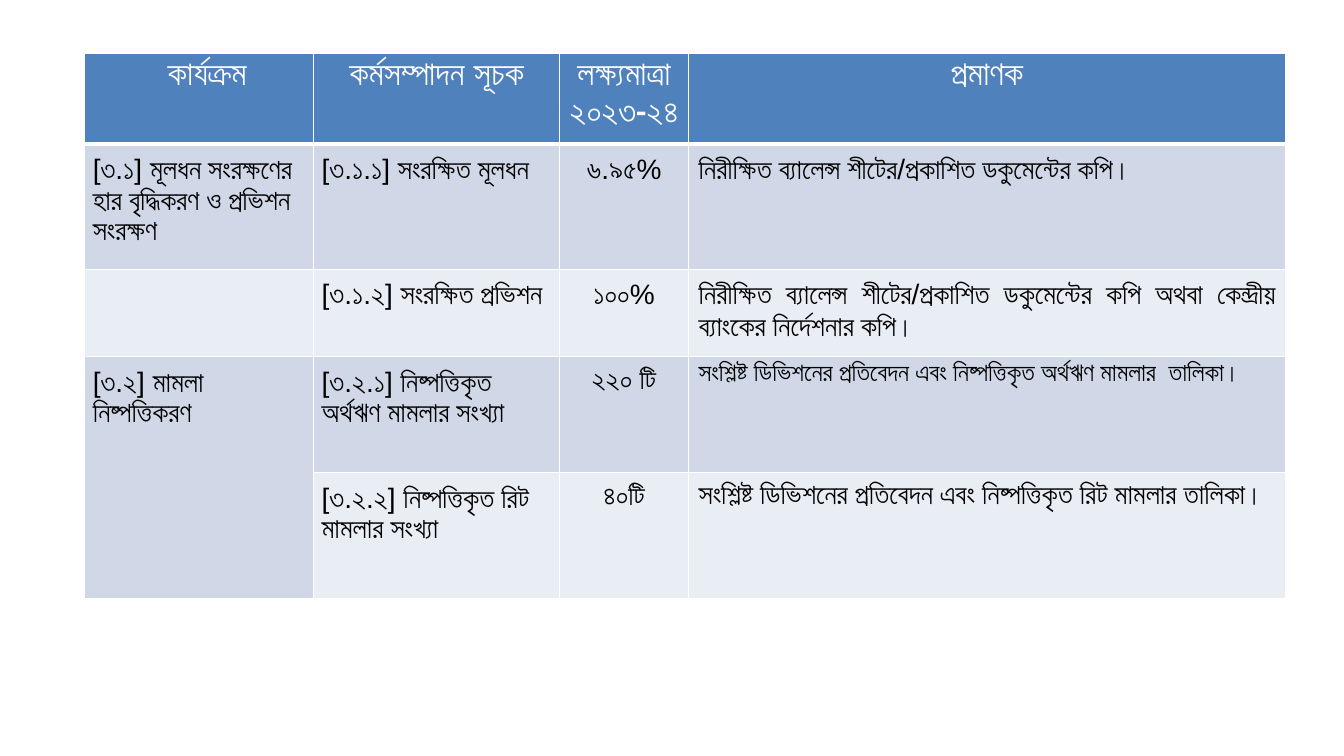
import pptx
import pptx.util
import pptx.dml.color
import pptx.enum.text
from lxml import etree
from pptx.oxml.ns import qn

Inches, Pt = pptx.util.Inches, pptx.util.Pt
ALIGN = pptx.enum.text.PP_ALIGN

HEADINGS = ["কার্যক্রম", "কর্মসম্পাদন সূচক", "লক্ষ্যমাত্রা ২০২৩-২৪", "প্রমাণক"]
TARGETS = [
    ("[৩.১] মূলধন সংরক্ষণের হার বৃদ্ধিকরণ ও প্রভিশন সংরক্ষণ",
     "[৩.১.১] সংরক্ষিত মূলধন", "৬.৯৫%",
     "নিরীক্ষিত ব্যালেন্স শীটের/প্রকাশিত ডকুমেন্টের কপি।"),
    ("", "[৩.১.২] সংরক্ষিত প্রভিশন", "১০০%",
     "নিরীক্ষিত ব্যালেন্স শীটের/প্রকাশিত ডকুমেন্টের কপি অথবা কেন্দ্রীয় ব্যাংকের নির্দেশনার কপি।"),
    ("[৩.২] মামলা নিষ্পত্তিকরণ",
     "[৩.২.১] নিষ্পত্তিকৃত অর্থঋণ মামলার সংখ্যা", "২২০ টি",
     "সংশ্লিষ্ট ডিভিশনের প্রতিবেদন এবং নিষ্পত্তিকৃত অর্থঋণ মামলার  তালিকা।"),
    ("", "[৩.২.২] নিষ্পত্তিকৃত রিট মামলার সংখ্যা", "৪০টি",
     "সংশ্লিষ্ট ডিভিশনের প্রতিবেদন এবং নিষ্পত্তিকৃত রিট মামলার তালিকা।"),
]
COLUMN_WIDTHS = [2.27, 2.44, 1.28, 5.92]
ROW_HEIGHTS = [0.9, 1.24, 0.87, 1.15, 1.25]
LEFT, TOP = 0.84, 0.53
HEADER_FILL, BAND_FILLS = "4F81BD", ["D0D8E8", "E9EDF4"]
WHITE, BLACK = "FFFFFF", "000000"
PROOF_COLUMN = 3
SHORT_PROOF = (3, PROOF_COLUMN)  # the one proof set smaller, on a single line


def color(hex_value):
    return pptx.dml.color.RGBColor.from_string(hex_value)


def add_borders(cell, bottom_width):
    properties = cell._tc.get_or_add_tcPr()
    for side, width in (("L", 1), ("R", 1), ("T", 1), ("B", bottom_width)):
        line = etree.SubElement(properties, qn(f"a:ln{side}"), w=str(Pt(width)))
        solid = etree.SubElement(line, qn("a:solidFill"))
        etree.SubElement(solid, qn("a:srgbClr"), val=WHITE)


def style_cell(cell, fill, bottom_width, side_margin, end_margin):
    add_borders(cell, bottom_width)
    cell.fill.solid()
    cell.fill.fore_color.rgb = color(fill)
    cell.margin_left = cell.margin_right = Inches(side_margin)
    cell.margin_top = cell.margin_bottom = Inches(end_margin)


def write(cell, text, font_name, size, ink, bold, alignment):
    cell.text = text
    paragraph = cell.text_frame.paragraphs[0]
    paragraph.alignment = alignment
    font = paragraph.font
    font.name, font.size, font.bold = font_name, Pt(size), bold
    font.color.rgb = color(ink)
    return paragraph


def fill_header(table):
    for column, heading in enumerate(HEADINGS):
        cell = table.cell(0, column)
        style_cell(cell, HEADER_FILL, 3, 0.1, 0.05)
        write(cell, heading, "Calibri", 24, WHITE, True, ALIGN.CENTER)
    table.cell(0, 0).margin_left = Inches(0.26)


def fill_targets(table):
    column_alignments = [ALIGN.LEFT, ALIGN.LEFT, ALIGN.CENTER, ALIGN.JUSTIFY]
    for row, target in enumerate(TARGETS, start=1):
        for column, text in enumerate(target):
            cell = table.cell(row, column)
            is_proof = column == PROOF_COLUMN
            is_short = (row, column) == SHORT_PROOF
            margins = (0.1, 0.05) if is_proof else (0.08, 0.08)
            style_cell(cell, BAND_FILLS[(row - 1) % 2], 1, *margins)
            if not text:
                continue
            alignment = ALIGN.LEFT if is_short else column_alignments[column]
            paragraph = write(cell, text, "Arial", 18 if is_short else 20,
                              BLACK, False, alignment)
            if not is_short:
                paragraph.line_spacing = 1.15 if is_proof else 1.07
            if not is_proof:
                paragraph.space_after = Pt(15)


def main():
    deck = pptx.Presentation()
    deck.slide_width, deck.slide_height = Inches(13.33), Inches(7.5)
    slide = deck.slides.add_slide(deck.slide_layouts[6])
    table = slide.shapes.add_table(
        len(ROW_HEIGHTS), len(COLUMN_WIDTHS), Inches(LEFT), Inches(TOP),
        Inches(sum(COLUMN_WIDTHS)), Inches(sum(ROW_HEIGHTS))).table
    for column, width in zip(table.columns, COLUMN_WIDTHS):
        column.width = Inches(width)
    for row, height in zip(table.rows, ROW_HEIGHTS):
        row.height = Inches(height)
    fill_header(table)
    fill_targets(table)
    table.cell(3, 0).merge(table.cell(4, 0))
    deck.save("out.pptx")


if __name__ == "__main__":
    main()
